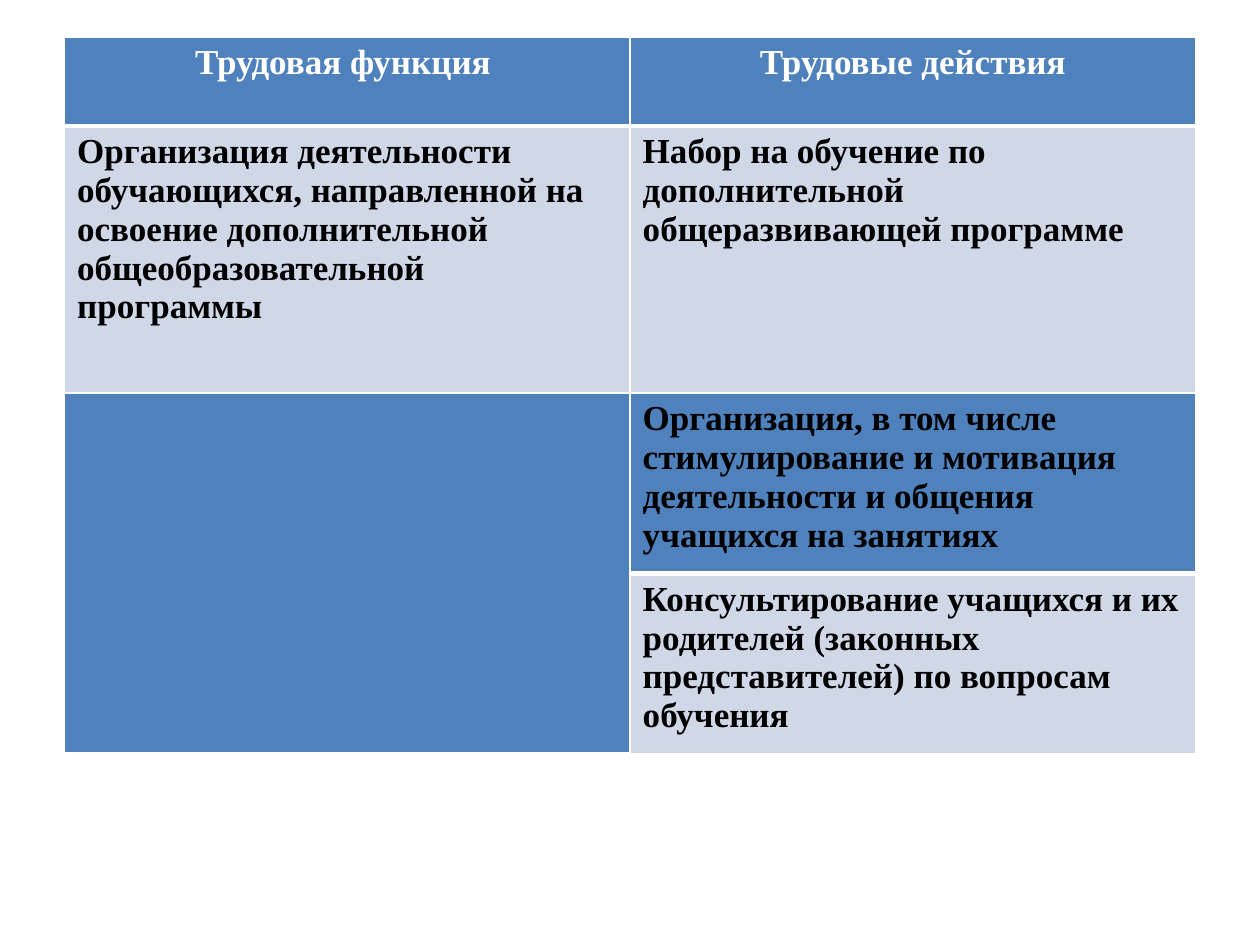
"""Build a slide with two stacked tables of job functions and actions."""
import pptx
import pptx.dml.color
import pptx.enum.text
import pptx.oxml
import pptx.oxml.ns
import pptx.util

Pt = pptx.util.Pt
BLUE, PALE, WHITE, BLACK = "4F81BD", "D0D8E8", "FFFFFF", "000000"


def color(code):
    return pptx.dml.color.RGBColor.from_string(code)


def style(cell, fill, base):
    props = cell._tc.get_or_add_tcPr()
    for side, width in (("L", 1), ("R", 1), ("T", 1), ("B", base)):
        props.append(pptx.oxml.parse_xml(
            f'<a:ln{side} {pptx.oxml.ns.nsdecls("a")} w="{Pt(width)}">'
            f'<a:solidFill><a:srgbClr val="{WHITE}"/></a:solidFill></a:ln{side}>'))
    cell.fill.solid()
    cell.fill.fore_color.rgb = color(fill)


deck = pptx.Presentation()
deck.slide_width, deck.slide_height = Pt(720), Pt(540)
slide = deck.slides.add_slide(deck.slide_layouts[6])

head = [("Трудовая функция ", BLUE, WHITE, 3),
        ("Трудовые действия", BLUE, WHITE, 3)]
body = [("Организация деятельности обучающихся, направленной на освоение "
         "дополнительной общеобразовательной программы", PALE, BLACK, 1),
        ("Набор на обучение по дополнительной общеразвивающей программе",
         PALE, BLACK, 1)]
motive = [("", BLUE, BLACK, 3),
          ("Организация, в том числе стимулирование и мотивация деятельности "
           "и общения учащихся на занятиях", BLUE, BLACK, 3)]
advice = [("", BLUE, BLACK, 3),
          ("Консультирование учащихся и их родителей (законных представителей) "
           "по вопросам  обучения", PALE, BLACK, 1)]

tables = []
for top, sizes, rows in ((21, (51, 152.6), (head, body)),
                         (224.6, (103.2, 103.2), (motive, advice))):
    frame = slide.shapes.add_table(2, 2, Pt(36.9), Pt(top), Pt(646.4), Pt(sum(sizes)))
    table = frame.table
    tables.append(table)
    for row, size, items in zip(table.rows, sizes, rows):
        row.height = Pt(size)
        for cell, (text, fill, ink, base) in zip(row.cells, items):
            style(cell, fill, base)
            if not text:
                continue
            para = cell.text_frame.paragraphs[0]
            if items is head:
                para.alignment = pptx.enum.text.PP_ALIGN.CENTER
            run = para.add_run()
            run.text = text
            run.font.name = "Times New Roman"
            run.font.size = Pt(20)
            run.font.bold = True
            run.font.color.rgb = color(ink)

lower = tables[1]
lower.cell(0, 0).merge(lower.cell(1, 0))

deck.save("out.pptx")
